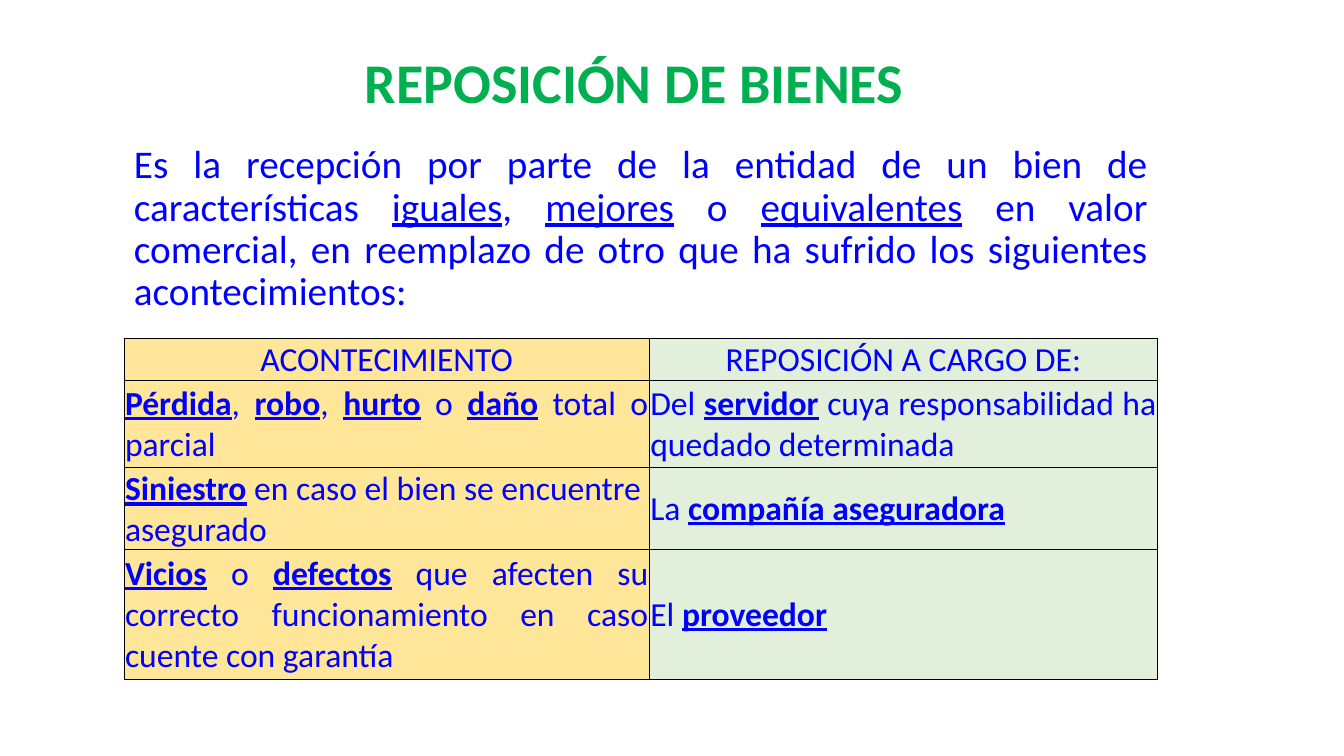
"""Build the slide on the replacement of goods."""
from lxml import etree
from pptx import Presentation
from pptx.dml.color import RGBColor
from pptx.enum.text import MSO_ANCHOR, PP_ALIGN
from pptx.oxml.ns import qn
from pptx.util import Inches, Pt

LEFT, CENTER, JUSTIFY = PP_ALIGN.LEFT, PP_ALIGN.CENTER, PP_ALIGN.JUSTIFY
MIDDLE = MSO_ANCHOR.MIDDLE
GREEN = RGBColor(0x00, 0xB0, 0x50)
BLUE = RGBColor(0x00, 0x00, 0xFF)
YELLOW = RGBColor(0xFF, 0xE6, 0x99)
MINT = RGBColor(0xE2, 0xEF, 0xDA)
FONT = "Calibri"

TITLE = "REPOSICIÓN DE BIENES"
DEFINITION = (
    "Es la recepción por parte de la entidad de un bien de características "
    "*iguales*, *mejores* o *equivalentes* en valor comercial, en reemplazo "
    "de otro que ha sufrido los siguientes acontecimientos:"
)
ROWS = [
    (0.38, ("ACONTECIMIENTO", CENTER), ("REPOSICIÓN A CARGO DE:", CENTER)),
    (0.87, ("*Pérdida*, *robo*, *hurto* o *daño* total o parcial", JUSTIFY),
     ("Del *servidor* cuya responsabilidad ha quedado determinada", JUSTIFY)),
    (0.73, ("*Siniestro* en caso el bien se encuentre asegurado", LEFT),
     ("La *compañía aseguradora*", JUSTIFY)),
    (1.29, ("*Vicios* o *defectos* que afecten su correcto funcionamiento "
            "en caso cuente con garantía", JUSTIFY),
     ("El *proveedor*", LEFT)),
]
COLUMNS = [(5.21, YELLOW), (5.04, MINT)]
LEFT_EDGE, WIDTH = 1.23, 10.25


def write(p, text, size, color, align, bold_marks=False):
    """Fill a paragraph, underlining the words between asterisks."""
    p.alignment = align
    p.font.name, p.font.size = FONT, Pt(size)
    p.font.color.rgb = color
    for i, part in enumerate(text.split("*")):
        if part:
            r = p.add_run()
            r.text = part
            if i % 2:
                r.font.underline = True
                if bold_marks:
                    r.font.bold = True


def add_text(s, left, top, width, height):
    """Add a wrapping text box and return its first paragraph."""
    box = s.shapes.add_textbox(*map(Inches, (left, top, width, height)))
    box.text_frame.word_wrap = True
    p = box.text_frame.paragraphs[0]
    p.line_spacing = 0.9
    return p


def add_borders(cell):
    """Draw a thin black line on each side of a cell."""
    tc_pr = cell._tc.get_or_add_tcPr()
    for side in ("lnL", "lnR", "lnT", "lnB"):
        ln = etree.SubElement(tc_pr, qn(f"a:{side}"), w=str(Pt(0.5)))
        fill = etree.SubElement(ln, qn("a:solidFill"))
        etree.SubElement(fill, qn("a:srgbClr"), val="000000")


def add_table(s):
    """Add the table of events and who answers for them."""
    height = sum(row[0] for row in ROWS)
    frame = s.shapes.add_table(
        len(ROWS), len(COLUMNS), Inches(LEFT_EDGE), Inches(3.36),
        Inches(WIDTH), Inches(height))
    table = frame.table
    table.first_row = table.horz_banding = False
    for j, (width, _) in enumerate(COLUMNS):
        table.columns[j].width = Inches(width)
    for i, (row_height, *texts) in enumerate(ROWS):
        table.rows[i].height = Inches(row_height)
        for j, (text, align) in enumerate(texts):
            cell = table.cell(i, j)
            cell.margin_left = cell.margin_right = cell.margin_top = Inches(0.01)
            cell.margin_bottom = 0
            cell.vertical_anchor = MIDDLE
            add_borders(cell)
            cell.fill.solid()
            cell.fill.fore_color.rgb = COLUMNS[j][1]
            write(cell.text_frame.paragraphs[0], text, 24, BLUE, align, True)


def main():
    """Create and save the presentation."""
    prs = Presentation()
    prs.slide_width, prs.slide_height = Inches(13.33), Inches(7.5)
    s = prs.slides.add_slide(prs.slide_layouts[6])
    p = add_text(s, 3.52, 0.45, 6.38, 0.77)
    write(p, TITLE, 40, GREEN, LEFT)
    p.font.bold = True
    r = p.add_run()
    r.text = " "
    r.font.size = Pt(44)
    p = add_text(s, LEFT_EDGE, 1.39, WIDTH, 1.8)
    write(p, DEFINITION, 28, BLUE, JUSTIFY)
    add_table(s)
    prs.save("out.pptx")


if __name__ == "__main__":
    main()
